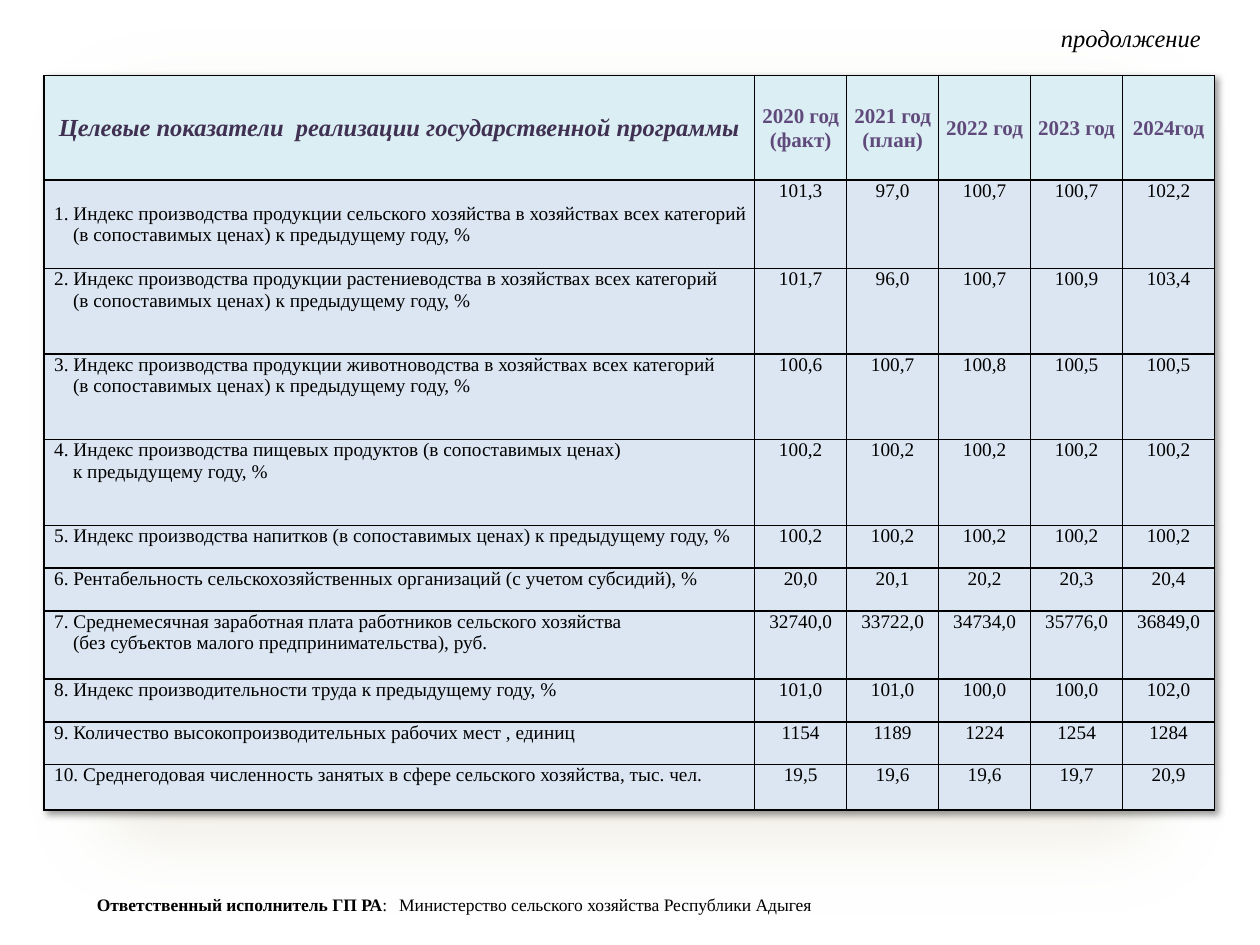
from dataclasses import dataclass

from lxml import etree
from pptx import Presentation
from pptx.dml.color import RGBColor
from pptx.enum.shapes import MSO_SHAPE
from pptx.enum.text import MSO_ANCHOR, PP_ALIGN
from pptx.oxml import parse_xml
from pptx.oxml.ns import qn
from pptx.slide import Slide
from pptx.table import Table, _Cell
from pptx.text.text import _Paragraph, _Run
from pptx.util import Inches, Pt

CENTER, JUSTIFY, LEFT = PP_ALIGN.CENTER, PP_ALIGN.JUSTIFY, PP_ALIGN.LEFT
TOP, MIDDLE = MSO_ANCHOR.TOP, MSO_ANCHOR.MIDDLE
RECTANGLE = MSO_SHAPE.RECTANGLE

FONT = "Times New Roman"
NAMESPACE = "http://schemas.openxmlformats.org/drawingml/2006/main"
COLORS = {
    "backdrop": "EEECE1",
    "header": "DBEEF4",
    "body": "DCE6F2",
    "title": "403152",
    "year": "604A7B",
    "black": "000000",
}
COLUMN_WIDTHS = [5.64] + [0.73] * 5
HEADER_HEIGHT = 0.83
HEADER_MARGINS = (0.01, 0.01, 0.01, 0)
VALUE_MARGINS = (0.07, 0, 0.07, 0)
NAME_MARGINS = (0.08, 0, 0.01, 0)
TITLE_MARGINS = (0.1, 0.05, 0.1, 0.05)
SECOND_LINE_INDENT = 0.15
TITLE = "Целевые показатели  реализации государственной программы"
YEARS = ["2020 год (факт)", "2021 год (план)", "2022 год", "2023 год", "2024год"]


@dataclass(frozen=True)
class TextStyle:
    size: float
    color: str = "black"
    bold: bool = False
    italic: bool = False


@dataclass(frozen=True)
class Indicator:
    name: str
    values: str
    height: float
    anchor: MSO_ANCHOR = TOP


TITLE_STYLE = TextStyle(14, "title", bold=True, italic=True)
YEAR_STYLE = TextStyle(12, "year", bold=True)
BODY_STYLE = TextStyle(11)

INDICATORS = [
    Indicator("1. Индекс производства продукции сельского хозяйства в хозяйствах всех категорий\n"
              "(в сопоставимых ценах) к предыдущему году, %",
              "101,3 97,0 100,7 100,7 102,2", 0.7, MIDDLE),
    Indicator("2. Индекс производства продукции растениеводства в хозяйствах всех категорий\n"
              "(в сопоставимых ценах) к предыдущему году, %",
              "101,7 96,0 100,7 100,9 103,4", 0.68),
    Indicator("3. Индекс производства продукции животноводства в хозяйствах всех категорий\n"
              "(в сопоставимых ценах) к предыдущему году, %",
              "100,6 100,7 100,8 100,5 100,5", 0.68),
    Indicator("4. Индекс производства пищевых продуктов (в сопоставимых ценах)\n"
              "к предыдущему году, %",
              "100,2 100,2 100,2 100,2 100,2", 0.68),
    Indicator("5. Индекс производства напитков (в сопоставимых ценах) к предыдущему году, %",
              "100,2 100,2 100,2 100,2 100,2", 0.34),
    Indicator("6. Рентабельность сельскохозяйственных организаций (с учетом субсидий), %",
              "20,0 20,1 20,2 20,3 20,4", 0.34),
    Indicator("7. Среднемесячная заработная плата работников сельского хозяйства\n"
              "(без субъектов малого предпринимательства), руб.",
              "32740,0 33722,0 34734,0 35776,0 36849,0", 0.54),
    Indicator("8. Индекс производительности труда к предыдущему году, %",
              "101,0 101,0 100,0 100,0 102,0", 0.34),
    Indicator("9. Количество высокопроизводительных рабочих мест , единиц",
              "1154 1189 1224 1254 1284", 0.34),
    Indicator("10. Среднегодовая численность занятых в сфере сельского хозяйства, тыс. чел.",
              "19,5 19,6 19,6 19,7 20,9", 0.36),
]


def format_run(run: _Run, style: TextStyle) -> None:
    """Apply a text style to one run."""
    run.font.name = FONT
    run.font.size = Pt(style.size)
    run.font.bold = style.bold
    run.font.italic = style.italic
    run.font.color.rgb = RGBColor.from_string(COLORS[style.color])


def add_borders(cell: _Cell) -> None:
    """Draw a black one-point line on every side of a cell."""
    properties = cell._tc.get_or_add_tcPr()
    for side in ("lnL", "lnR", "lnT", "lnB"):
        line = etree.SubElement(properties, qn(f"a:{side}"), w=str(Pt(1)))
        fill = etree.SubElement(line, qn("a:solidFill"))
        etree.SubElement(fill, qn("a:srgbClr"), val=COLORS["black"])


def fill_cell(cell: _Cell, text: str, style: TextStyle, fill: str, margins: tuple,
              anchor: MSO_ANCHOR = MIDDLE, alignment: PP_ALIGN = CENTER) -> None:
    """Write and format one table cell."""
    add_borders(cell)
    cell.fill.solid()
    cell.fill.fore_color.rgb = RGBColor.from_string(COLORS[fill])
    cell.margin_left, cell.margin_top, cell.margin_right, cell.margin_bottom = map(Inches, margins)
    cell.vertical_anchor = anchor
    cell.text_frame.text = text
    for index, paragraph in enumerate(cell.text_frame.paragraphs):
        paragraph.alignment = alignment
        if index:
            paragraph._p.get_or_add_pPr().set("marL", str(Inches(SECOND_LINE_INDENT)))
        for run in paragraph.runs:
            format_run(run, style)


def add_backdrop(slide: Slide) -> None:
    """Cover the slide with a soft-edged rectangle."""
    backdrop = slide.shapes.add_shape(RECTANGLE, 0, 0, Inches(10), Inches(7.5))
    backdrop.fill.solid()
    backdrop.fill.fore_color.rgb = RGBColor.from_string(COLORS["backdrop"])
    backdrop.line.fill.background()
    backdrop.shadow.inherit = False
    effects = backdrop._element.spPr.find(qn("a:effectLst"))
    etree.SubElement(effects, qn("a:softEdge"), rad=str(Pt(50)))


def add_table_shadow(table: Table) -> None:
    """Cast a soft shadow to the lower right of the table."""
    table._tbl.tblPr.insert(0, parse_xml(
        f'<a:effectLst xmlns:a="{NAMESPACE}">'
        f'<a:outerShdw blurRad="{Pt(4)}" dist="{Pt(3)}" dir="2700000" algn="tl" rotWithShape="0">'
        f'<a:srgbClr val="{COLORS["black"]}"><a:alpha val="40000"/></a:srgbClr>'
        "</a:outerShdw></a:effectLst>"))


def add_indicator_table(slide: Slide) -> None:
    """Build the table of target indicators by year."""
    heights = [HEADER_HEIGHT] + [indicator.height for indicator in INDICATORS]
    table = slide.shapes.add_table(len(heights), len(COLUMN_WIDTHS), Inches(0.35), Inches(0.6),
                                   Inches(sum(COLUMN_WIDTHS)), Inches(sum(heights))).table
    add_table_shadow(table)
    for column, width in zip(table.columns, COLUMN_WIDTHS):
        column.width = Inches(width)
    for row, height in zip(table.rows, heights):
        row.height = Inches(height)
    fill_cell(table.cell(0, 0), TITLE, TITLE_STYLE, "header", TITLE_MARGINS)
    for column, year in enumerate(YEARS, 1):
        fill_cell(table.cell(0, column), year, YEAR_STYLE, "header", HEADER_MARGINS)
    for row, indicator in enumerate(INDICATORS, 1):
        alignment = LEFT if indicator.anchor == MIDDLE else JUSTIFY
        fill_cell(table.cell(row, 0), indicator.name, BODY_STYLE, "body", NAME_MARGINS,
                  indicator.anchor, alignment)
        for column, value in enumerate(indicator.values.split(), 1):
            fill_cell(table.cell(row, column), value, BODY_STYLE, "body", VALUE_MARGINS, TOP)


def add_text(slide: Slide, box: tuple, parts: list[tuple[str, TextStyle]],
             anchor: MSO_ANCHOR = TOP, alignment: PP_ALIGN = LEFT) -> _Paragraph:
    """Add a one-paragraph text box made of styled runs."""
    text_frame = slide.shapes.add_textbox(*map(Inches, box)).text_frame
    text_frame.word_wrap = True
    text_frame.vertical_anchor = anchor
    paragraph = text_frame.paragraphs[0]
    paragraph.alignment = alignment
    for text, style in parts:
        run = paragraph.add_run()
        run.text = text
        format_run(run, style)
    return paragraph


def main() -> None:
    """Build and save the slide."""
    presentation = Presentation()
    presentation.slide_width, presentation.slide_height = Inches(10), Inches(7.5)
    slide = presentation.slides.add_slide(presentation.slide_layouts[6])
    add_backdrop(slide)
    add_indicator_table(slide)
    add_text(slide, (8.15, 0.13, 1.65, 0.34), [("продолжение", TextStyle(14, italic=True))],
             alignment=CENTER)
    footer = add_text(slide, (0.67, 6.98, 7.72, 0.39), [
        ("Ответственный исполнитель ГП РА", TextStyle(10, bold=True)),
        (":\tМинистерство сельского хозяйства Республики Адыгея", TextStyle(10)),
    ], MIDDLE)
    tabs = etree.SubElement(footer._p.get_or_add_pPr(), qn("a:tabLst"))
    etree.SubElement(tabs, qn("a:tab"), pos=str(Inches(2.4)), algn="l")
    presentation.save("out.pptx")


if __name__ == "__main__":
    main()
